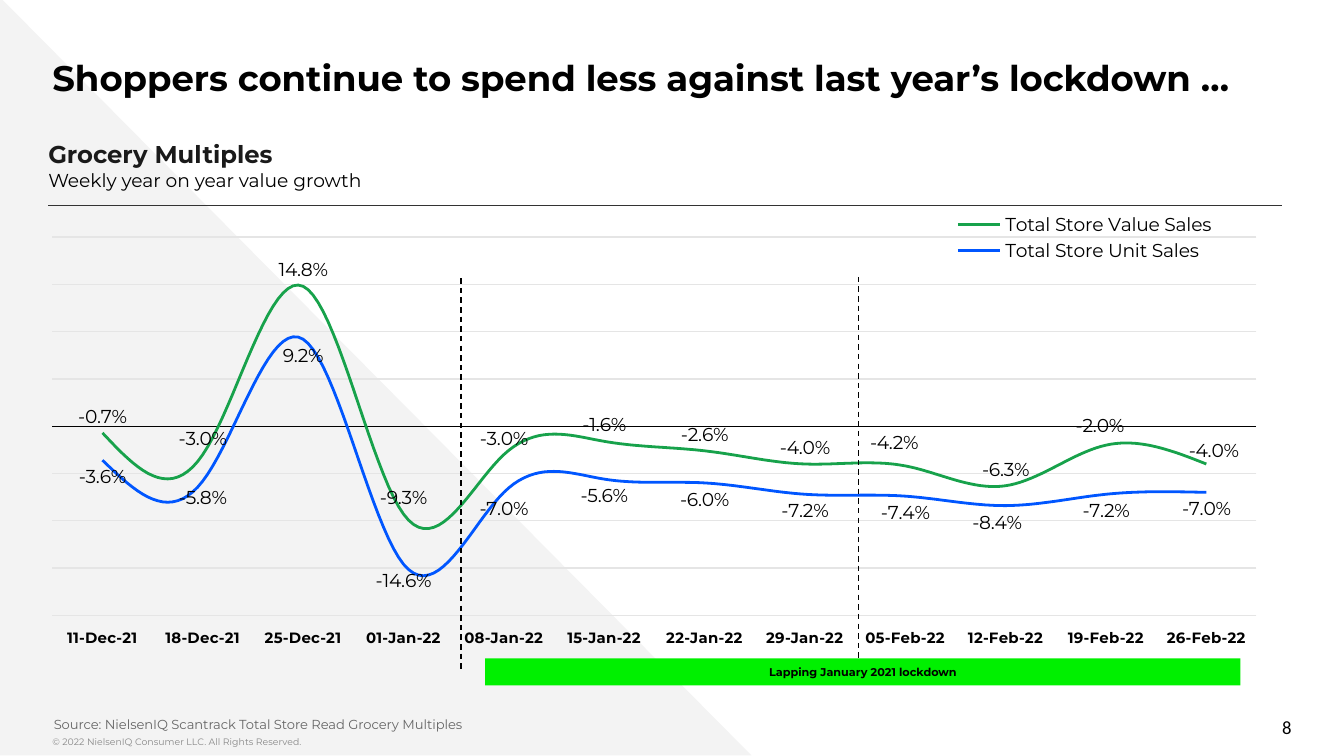
from dataclasses import dataclass

from lxml import etree
from pptx import Presentation
from pptx.chart.data import CategoryChartData
from pptx.dml.color import RGBColor
from pptx.enum.chart import XL_CHART_TYPE as ChartType, XL_LABEL_POSITION as LabelPos
from pptx.enum.chart import XL_LEGEND_POSITION as LegendPos, XL_MARKER_STYLE as Marker
from pptx.enum.chart import XL_TICK_LABEL_POSITION as TickPos, XL_TICK_MARK as Tick
from pptx.enum.dml import MSO_LINE
from pptx.enum.shapes import MSO_CONNECTOR, MSO_SHAPE
from pptx.enum.text import MSO_ANCHOR, MSO_AUTO_SIZE, PP_ALIGN
from pptx.oxml.ns import qn
from pptx.util import Inches, Pt


@dataclass(frozen=True)
class Theme:
    font: str = "Montserrat"
    number_font: str = "Calibri"
    black: str = "000000"
    heading: str = "1A1A1A"
    rule: str = "333333"
    source: str = "666666"
    footer: str = "888888"
    grid: str = "E5E5E5"
    wedge: str = "F3F3F3"
    value: str = "17A24B"
    unit: str = "0056FF"
    banner: str = "00F000"
    title_pt: float = 19
    heading_pt: float = 13
    body_pt: float = 10
    axis_pt: float = 8
    source_pt: float = 7
    banner_pt: float = 6
    footer_pt: float = 5
    thin: float = 0.75
    thick: float = 1.5


def rgb(color):
    return RGBColor.from_string(color)


def set_layout(parent, index, **values):
    """Put a manual chart layout at the given child position."""
    for old in parent.findall(qn("c:layout")):
        parent.remove(old)
    layout = etree.Element(qn("c:layout"))
    manual = etree.SubElement(layout, qn("c:manualLayout"))
    for tag, value in values.items():
        etree.SubElement(manual, qn(f"c:{tag}")).set("val", str(value))
    parent.insert(index, layout)


class Builder:
    def __init__(self, slide, theme):
        self.slide, self.theme = slide, theme

    def style(self, font, size, color=None, bold=False, name=None):
        font.name = name or self.theme.font
        font.size, font.bold = Pt(size), bold
        font.color.rgb = rgb(color or self.theme.black)

    def frame(self, sp, inset, anchor=MSO_ANCHOR.TOP):
        tf = sp.text_frame
        tf.word_wrap, tf.auto_size = True, MSO_AUTO_SIZE.NONE
        tf.vertical_anchor = anchor
        tf.margin_left = tf.margin_right = 0
        tf.margin_top = tf.margin_bottom = Inches(inset)
        return tf

    def placeholder(self, sp, box, text, size, color=None, bold=False):
        sp.left, sp.top, sp.width, sp.height = map(Inches, box)
        tf = self.frame(sp, 0.1)
        tf.text = text
        p = tf.paragraphs[0]
        p.alignment, p.space_before = PP_ALIGN.LEFT, Pt(0)
        self.style(p.font, size, color, bold)
        return tf

    def text(self, box, text, size, color=None, name=None,
             align=PP_ALIGN.LEFT, anchor=MSO_ANCHOR.TOP):
        sp = self.slide.shapes.add_textbox(*map(Inches, box))
        p = self.frame(sp, 0.05, anchor).paragraphs[0]
        p.text, p.alignment = text, align
        self.style(p.font, size, color, name=name)

    def heading(self, box, title, subtitle):
        t = self.theme
        sp = self.slide.shapes.add_textbox(*map(Inches, box))
        p = self.frame(sp, 0.05).paragraphs[0]
        p.space_after = Pt(12)
        r = p.add_run()
        r.text = title
        self.style(r.font, t.heading_pt, t.heading, bold=True)
        p.add_line_break()
        r = p.add_run()
        r.text = subtitle
        self.style(r.font, t.body_pt)

    def shape(self, kind, box, fill):
        sp = self.slide.shapes.add_shape(kind, *map(Inches, box))
        sp.shadow.inherit = False
        sp.fill.solid()
        sp.fill.fore_color.rgb = rgb(fill)
        sp.line.fill.background()
        return sp

    def banner(self, box, text):
        sp = self.shape(MSO_SHAPE.RECTANGLE, box, self.theme.banner)
        p = self.frame(sp, 0.05, MSO_ANCHOR.MIDDLE).paragraphs[0]
        p.text, p.alignment = text, PP_ALIGN.CENTER
        self.style(p.font, self.theme.banner_pt, bold=True)

    def line(self, x1, y1, x2, y2, color, dash=None):
        cx = self.slide.shapes.add_connector(
            MSO_CONNECTOR.STRAIGHT, *map(Inches, (x1, y1, x2, y2)))
        cx.line.color.rgb, cx.line.width = rgb(color), Pt(self.theme.thin)
        if dash:
            cx.line.dash_style = dash
        etree.SubElement(cx.element.spPr, qn("a:effectLst"))

    def line_chart(self, box, categories, series):
        t = self.theme
        data = CategoryChartData(number_format="0.0%")
        data.categories = categories
        for name, values, *_ in series:
            data.add_series(name, [round(v / 100, 3) for v in values])
        chart = self.slide.shapes.add_chart(
            ChartType.LINE, *map(Inches, box), data).chart
        self.style(chart.font, t.body_pt)
        chart.has_title = False

        # Axes
        cat, val = chart.category_axis, chart.value_axis
        cat.tick_label_position = TickPos.LOW
        cat.major_tick_mark = Tick.NONE
        cat.format.line.color.rgb, cat.format.line.width = rgb(t.black), Pt(t.thin)
        self.style(cat.tick_labels.font, t.axis_pt, bold=True)
        val.minimum_scale, val.maximum_scale, val.major_unit = -0.2, 0.2, 0.05
        val.visible = False
        grid = val.major_gridlines.format.line
        grid.color.rgb, grid.width = rgb(t.grid), Pt(t.thin)

        # Legend and plot position
        chart.has_legend = True
        legend = chart.legend
        legend.position, legend.include_in_layout = LegendPos.LEFT, False
        self.style(legend.font, t.body_pt)
        set_layout(legend._element, 1, xMode="edge", yMode="edge",
                   x=0.72, y=0.01, w=0.23, h=0.11)
        set_layout(chart._chartSpace.chart.plotArea, 0, layoutTarget="inner",
                   xMode="edge", yMode="edge", x=0.001, y=0.064, w=0.973, h=0.767)

        # Series, with a few labels nudged off their points
        for ser, (_, _, color, pos, nudges) in zip(chart.plots[0].series, series):
            ser.smooth = True
            ser.marker.style = Marker.NONE
            ser.format.line.color.rgb = rgb(color)
            ser.format.line.width = Pt(t.thick)
            labels = ser.data_labels
            labels.show_value, labels.position = True, pos
            labels.number_format, labels.number_format_is_linked = "0.0%", False
            self.style(labels.font, t.body_pt)
            for i in nudges:
                label = ser.points[i].data_label
                label.position = pos
                self.style(label.font, t.body_pt)
            for d in labels._element.findall(qn("c:dLbl")):
                dx, dy = nudges[int(d.find(qn("c:idx")).get("val"))]
                set_layout(d, 1, x=dx, y=dy)
                fmt = etree.Element(qn("c:numFmt"), formatCode="0.0%", sourceLinked="0")
                d.insert(2, fmt)


def main():
    t = Theme()
    prs = Presentation()
    prs.slide_width = Inches(10)
    prs.slide_height = prs.slide_width * 9 // 16
    s = prs.slides.add_slide(prs.slide_layouts[0])
    b = Builder(s, t)

    # Background wedge, behind everything
    wedge = b.shape(MSO_SHAPE.RIGHT_TRIANGLE, (0, -0.02, 5.59, 5.64), t.wedge).element
    wedge.getparent().insert(2, wedge)

    # Title, heading and rule
    b.placeholder(s.shapes.title, (0.39, 0.32, 9.47, 0.43),
                  "Shoppers continue to spend less against last year’s lockdown …",
                  t.title_pt, bold=True)
    b.heading((0.36, 0.99, 4.16, 0.54), "Grocery Multiples",
              "Weekly year on year value growth")
    b.line(0.36, 1.53, 9.54, 1.53, t.rule)

    # Growth chart
    weeks = ["11-Dec-21", "18-Dec-21", "25-Dec-21", "01-Jan-22", "08-Jan-22", "15-Jan-22",
             "22-Jan-22", "29-Jan-22", "05-Feb-22", "12-Feb-22", "19-Feb-22", "26-Feb-22"]
    b.line_chart((0.38, 1.53, 9.21, 3.67), weeks, [
        ("Total Store Value Sales",
         [-0.7, -3.0, 14.8, -9.3, -3.0, -1.6, -2.6, -4.0, -4.2, -6.3, -2.0, -4.0],
         t.value, LabelPos.ABOVE,
         {8: (-0.009, -0.014), 10: (-0.005, -0.006), 11: (0.006, 0.006)}),
        ("Total Store Unit Sales",
         [-3.6, -5.8, 9.2, -14.6, -7.0, -5.6, -6.0, -7.2, -7.4, -8.4, -7.2, -7.0],
         t.unit, LabelPos.BELOW, {9: (-0.007, 0)}),
    ])

    # Lockdown period
    for x, top in ((3.43, 2.07), (6.39, 2.06)):
        b.line(x, top, x, 5, t.black, MSO_LINE.DASH)
    b.banner((3.61, 4.9, 5.62, 0.2), "Lapping January 2021 lockdown")

    # Source, copyright and page number
    tf = b.placeholder(s.placeholders[1], (0.24, 5.23, 8.92, 0.2),
                       "Source: NielsenIQ Scantrack Total Store Read Grocery Multiples",
                       t.source_pt, t.source)
    tf.margin_left = Inches(0.16)
    b.text((0.39, 5.43, 5.54, 0.2),
           "© 2022 NielsenIQ Consumer LLC. All Rights Reserved.", t.footer_pt, t.footer)
    b.text((7.36, 5.26, 2.25, 0.3), "8", t.body_pt, name=t.number_font,
           align=PP_ALIGN.RIGHT, anchor=MSO_ANCHOR.MIDDLE)

    prs.save("out.pptx")


if __name__ == "__main__":
    main()
